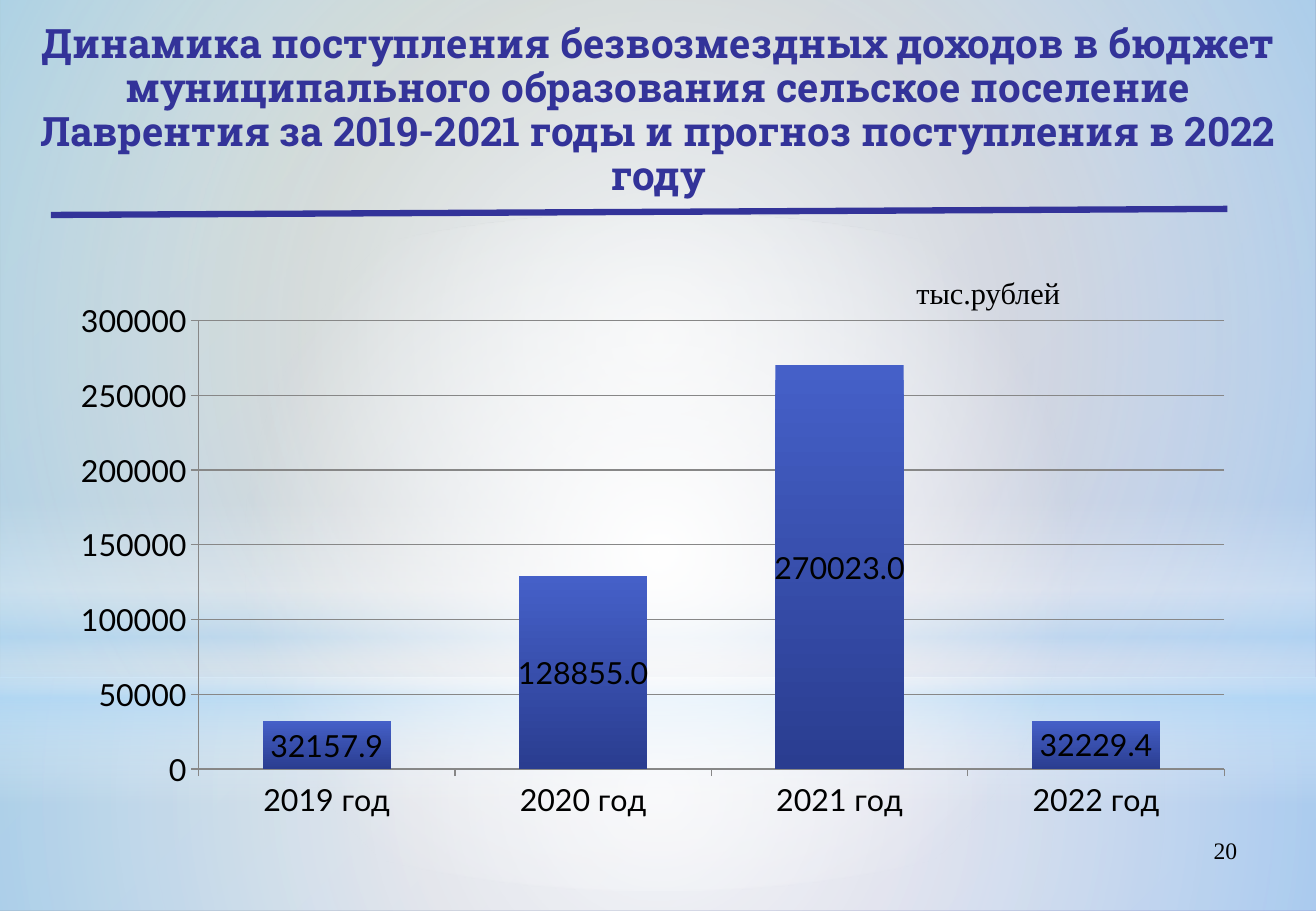
import pptx
import pptx.chart.data
import pptx.dml.color
import pptx.enum.chart
import pptx.enum.shapes
import pptx.enum.text
import pptx.oxml
import pptx.oxml.ns
import pptx.util
from dataclasses import dataclass
from lxml import etree

Pt = pptx.util.Pt
RGB = pptx.dml.color.RGBColor.from_string


@dataclass(frozen=True)
class Theme:
    accent: str = "333399"
    text: str = "000000"
    grid: str = "878787"
    bar_top: str = "4560C8"
    bar_bottom: str = "2A3D90"
    back_start: str = "96AB94"
    back_end: str = "8488C4"
    white: str = "FFFFFF"
    sky: str = "B4DCFA"
    title_font: str = "Roboto Slab"
    chart_font: str = "Lato"
    note_font: str = "Times New Roman"
    title_size: int = 24
    body_size: int = 18
    number_size: int = 14


theme = Theme()


def fill_two_stops(fill, start, end, angle):
    fill.gradient()
    fill.gradient_angle = angle
    for stop, color in zip(fill.gradient_stops, (start, end)):
        stop.color.rgb = RGB(color)


def style_font(font, name, size, color, bold=False):
    font.name = name
    font.size = Pt(size)
    font.color.rgb = RGB(color)
    font.bold = bold


presentation = pptx.Presentation()
presentation.slide_width = Pt(780.48)
presentation.slide_height = Pt(540)
slide = presentation.slides.add_slide(presentation.slide_layouts[5])
fill_two_stops(slide.background.fill, theme.back_start, theme.back_end, 315)

# Translucent background washes: shape, top, height, shading, (position, colour, opacity)
radial = ('<a:path path="circle"><a:fillToRect l="50000" t="50000" '
          'r="50000" b="50000"/></a:path>')
vertical = '<a:lin ang="5400000" scaled="0"/>'
rectangle = pptx.enum.shapes.MSO_SHAPE.RECTANGLE
oval = pptx.enum.shapes.MSO_SHAPE.OVAL
white, sky = theme.white, theme.sky
washes = [
    (rectangle, 401.76, 138.24, radial, [(0, white, 91), (37, white, 76), (100, sky, 79)]),
    (rectangle, 0, 401.76, radial, [(0, white, 89), (48, white, 62), (100, sky, 79)]),
    (rectangle, 296.64, 180, vertical,
     [(0, white, 0), (29, white, 30), (45, sky, 40), (55, white, 26), (65, sky, 60),
      (100, white, 0)]),
    (oval, 126, 401.76, radial, [(0, white, 100), (56, white, 0)]),
]
for preset, top, height, shading, stops in washes:
    wash = slide.shapes.add_shape(preset, 0, Pt(top), presentation.slide_width, Pt(height))
    wash.shadow.inherit = False
    wash.line.fill.background()
    wash.fill.background()
    stop_xml = "".join(
        f'<a:gs pos="{position * 1000}"><a:srgbClr val="{color}">'
        f'<a:alpha val="{opacity * 1000}"/></a:srgbClr></a:gs>'
        for position, color, opacity in stops)
    gradient = pptx.oxml.parse_xml(
        f'<a:gradFill {pptx.oxml.ns.nsdecls("a")} rotWithShape="1">'
        f'<a:gsLst>{stop_xml}</a:gsLst>{shading}</a:gradFill>')
    properties = wash.element.spPr
    properties.replace(properties.find(pptx.oxml.ns.qn("a:noFill")), gradient)

# Title, brought in front of the washes
title = slide.shapes.title
title.element.getparent().append(title.element)
title.left, title.top = 0, Pt(6)
title.width, title.height = presentation.slide_width, Pt(120)
title.text_frame.text = (
    "Динамика поступления безвозмездных доходов в бюджет муниципального образования "
    "сельское поселение Лаврентия за 2019-2021 годы и прогноз поступления в 2022 году")
title.text_frame.word_wrap = True
title.text_frame.auto_size = pptx.enum.text.MSO_AUTO_SIZE.NONE
title.text_frame.vertical_anchor = pptx.enum.text.MSO_ANCHOR.MIDDLE
paragraph = title.text_frame.paragraphs[0]
paragraph.alignment = pptx.enum.text.PP_ALIGN.CENTER
paragraph.line_spacing = 0.9
paragraph.space_before = Pt(0)
style_font(paragraph.font, theme.title_font, theme.title_size, theme.accent, True)

title_rule = slide.shapes.add_connector(
    pptx.enum.shapes.MSO_CONNECTOR.STRAIGHT, Pt(30.24), Pt(127.44), Pt(727.92), Pt(123.84))
title_rule.line.color.rgb = RGB(theme.accent)
title_rule.line.width = Pt(3.75)
etree.SubElement(title_rule.element.spPr, pptx.oxml.ns.qn("a:effectLst"))

# Income chart
chart_data = pptx.chart.data.CategoryChartData(number_format="0.0")
chart_data.categories = [f"{year} год" for year in range(2019, 2023)]
chart_data.add_series("Series 1", (32157.9, 128855, 270023, 32229.4))
chart = slide.shapes.add_chart(
    pptx.enum.chart.XL_CHART_TYPE.COLUMN_STACKED,
    Pt(33.84), Pt(172.8), Pt(706.32), Pt(318.24), chart_data).chart
chart.has_legend = False
chart.has_title = False
style_font(chart.font, theme.chart_font, theme.body_size, theme.text)

plot = chart.plots[0]
plot.gap_width = 100
plot.overlap = 100
plot.vary_by_categories = False
fill_two_stops(plot.series[0].format.fill, theme.bar_top, theme.bar_bottom, 270)
plot.has_data_labels = True
labels = plot.data_labels
labels.show_value = True
labels.number_format = "0.0"
labels.number_format_is_linked = False
labels.position = pptx.enum.chart.XL_LABEL_POSITION.CENTER
style_font(labels.font, theme.chart_font, theme.body_size, theme.text)

value_axis = chart.value_axis
value_axis.minimum_scale = 0
value_axis.maximum_scale = 300000
value_axis.major_unit = 50000
value_axis.has_major_gridlines = True
value_axis.tick_labels.number_format = "0"
value_axis.tick_labels.number_format_is_linked = False
for axis in (value_axis, chart.category_axis):
    axis.major_tick_mark = pptx.enum.chart.XL_TICK_MARK.OUTSIDE
    axis.minor_tick_mark = pptx.enum.chart.XL_TICK_MARK.NONE
for line in (value_axis.format.line, chart.category_axis.format.line,
             value_axis.major_gridlines.format.line):
    line.color.rgb = RGB(theme.grid)
    line.width = Pt(0.75)

# Unit of measure and page number
align = pptx.enum.text.PP_ALIGN
notes = [
    ("тыс.рублей", 536.4, 159.12, 100.8, 28.8, theme.body_size, align.LEFT),
    ("20", 558.72, 491.76, 182.16, 37.44, theme.number_size, align.RIGHT),
]
for text, left, top, width, height, size, alignment in notes:
    note = slide.shapes.add_textbox(Pt(left), Pt(top), Pt(width), Pt(height))
    note.text_frame.word_wrap = True
    note.text_frame.text = text
    paragraph = note.text_frame.paragraphs[0]
    paragraph.alignment = alignment
    style_font(paragraph.font, theme.note_font, size, theme.text)

presentation.save("out.pptx")
